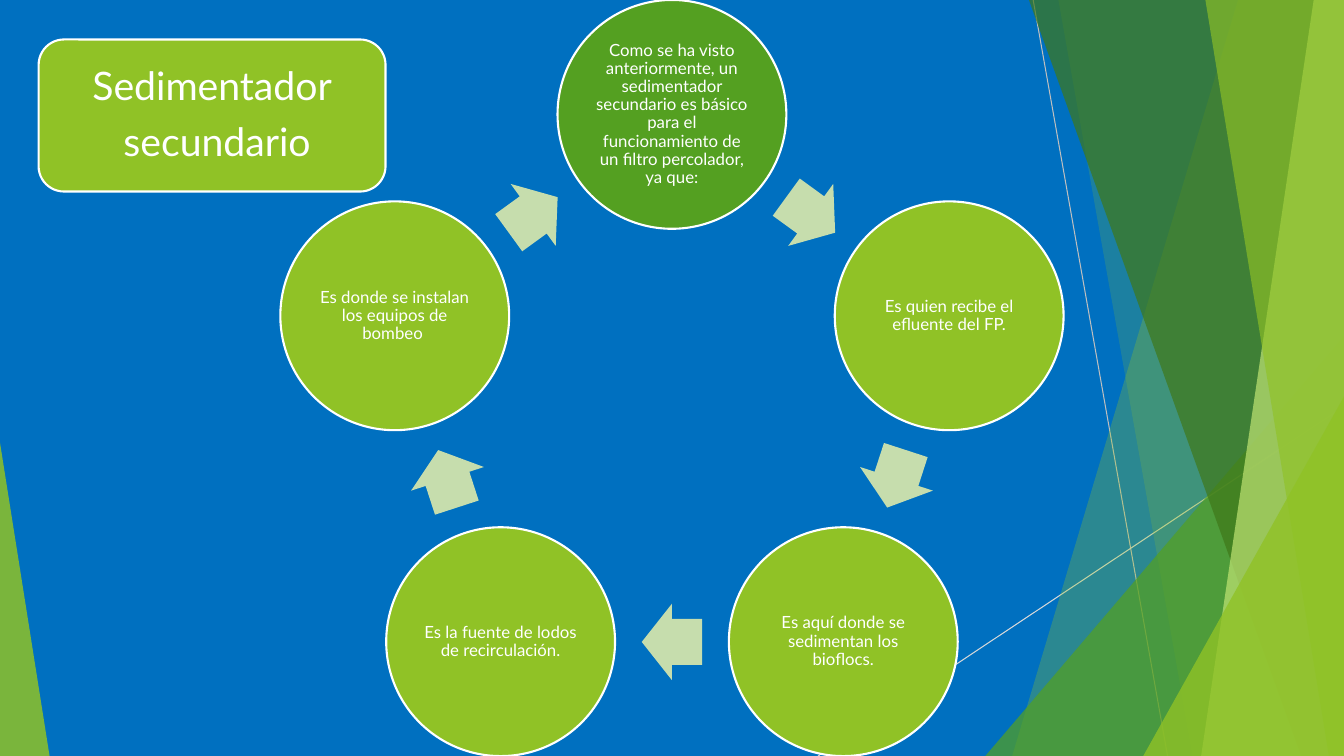
"""Build the cycle slide about the secondary settler."""
import math

import pptx
import pptx.dml.color
import pptx.enum.shapes
import pptx.enum.text
import pptx.oxml.ns
import pptx.util
from lxml import etree

RGBColor = pptx.dml.color.RGBColor
PRESETS = pptx.enum.shapes.MSO_SHAPE

BLUE = RGBColor(0x00, 0x70, 0xC0)
LIME = RGBColor(0x90, 0xC2, 0x26)
GREEN = RGBColor(0x54, 0xA0, 0x21)
DARK_GREEN = RGBColor(0x3F, 0x78, 0x19)
PALE_LIME = RGBColor(0xC0, 0xE4, 0x74)
ARROW_GREEN = RGBColor(0xC6, 0xDD, 0xAD)
GREY = RGBColor(0xBF, 0xBF, 0xBF)
LIGHT_GREY = RGBColor(0xD9, 0xD9, 0xD9)
WHITE = RGBColor(0xFF, 0xFF, 0xFF)

COLUMNS, ROWS = 160, 90
CELL = pptx.util.Inches(1) // 12
FONT = "Lato"

RING_CENTRE = (80, 48.32)
STEP_RADIUS, ARROW_RADIUS = 34.7, 28.1
STEP_SIZE = 27.24
ARROW_WIDTH, ARROW_HEIGHT = 7.2, 9.12

TITLE = ["Sedimentador", " secundario"]
STEPS = [
    "Como se ha visto anteriormente, un sedimentador secundario es básico "
    "para el funcionamiento de un filtro percolador, ya que:",
    "Es quien recibe el efluente del FP.",
    "Es aquí donde se sedimentan los bioflocs.",
    "Es la fuente de lodos de recirculación.",
    "Es donde se instalan los equipos de bombeo ",
]


def cells(count):
    """Turn a number of grid cells into a length."""
    return pptx.util.Emu(round(count * CELL))


def paint(shape, colour, opacity=100, outlined=False):
    """Fill a shape, with a white outline or none."""
    shape.shadow.inherit = False
    shape.fill.solid()
    shape.fill.fore_color.rgb = colour
    if opacity < 100:
        colour_node = shape.element.spPr.find(
            pptx.oxml.ns.qn("a:solidFill"))[0]
        alpha = etree.SubElement(colour_node, pptx.oxml.ns.qn("a:alpha"))
        alpha.set("val", str(opacity * 1000))
    if outlined:
        shape.line.color.rgb = WHITE
        shape.line.width = pptx.util.Pt(1.5)
    else:
        shape.line.fill.background()


def add_preset(slide, preset, left, top, width, height, adjustments=()):
    """Place a preset shape on the grid."""
    shape = slide.shapes.add_shape(
        preset, cells(left), cells(top), cells(width), cells(height))
    for index, value in enumerate(adjustments):
        shape.adjustments[index] = value
    return shape


def add_ray(slide, start, end, colour):
    """Draw a thin line between two grid points."""
    ray = slide.shapes.add_connector(
        pptx.enum.shapes.MSO_CONNECTOR.STRAIGHT,
        *(cells(value) for value in (*start, *end)))
    ray.line.color.rgb = colour
    ray.line.width = pptx.util.Pt(0.75)
    etree.SubElement(ray.element.spPr, pptx.oxml.ns.qn("a:effectLst"))


def add_facet(slide, top_column, bottom_column, colour, opacity):
    """Draw a full-height facet reaching the right edge."""
    outline = slide.shapes.build_freeform(
        cells(top_column), 0, scale=1.0)
    corners = [(COLUMNS, 0), (COLUMNS, ROWS), (bottom_column, ROWS)]
    outline.add_line_segments(
        [(cells(column), cells(row)) for column, row in corners], close=True)
    paint(outline.convert_to_shape(), colour, opacity)


def add_corner(slide, left, top, width, apex, colour, opacity):
    """Draw a triangle standing on the bottom edge."""
    corner = add_preset(slide, PRESETS.ISOSCELES_TRIANGLE,
                        left, top, width, ROWS - top, [apex])
    paint(corner, colour, opacity)


def write(shape, lines, size, inset):
    """Write centred white paragraphs inside a shape."""
    frame = shape.text_frame
    frame.word_wrap = True
    frame.vertical_anchor = pptx.enum.text.MSO_ANCHOR.MIDDLE
    frame.margin_left = frame.margin_right = cells(inset)
    frame.margin_top = frame.margin_bottom = cells(inset)
    for index, line in enumerate(lines):
        paragraph = frame.add_paragraph() if index else frame.paragraphs[0]
        paragraph.alignment = pptx.enum.text.PP_ALIGN.CENTER
        paragraph.line_spacing = 0.9
        paragraph.space_after = pptx.util.Pt(size * 0.35)
        run = paragraph.add_run()
        run.text = line
        run.font.name = FONT
        run.font.size = pptx.util.Pt(size)
        run.font.color.rgb = WHITE


def add_on_ring(slide, preset, angle, radius, width, height, adjustments=()):
    """Centre a preset shape on the ring, clockwise from the top."""
    turn = math.radians(angle)
    column = RING_CENTRE[0] + radius * math.sin(turn)
    row = RING_CENTRE[1] - radius * math.cos(turn)
    return add_preset(slide, preset, column - width / 2, row - height / 2,
                      width, height, adjustments)


def add_backdrop(slide):
    """Draw the rays and translucent facets at the slide edges."""
    add_ray(slide, (123, 0), (139, ROWS), GREY)
    add_ray(slide, (COLUMNS, 48.4), (97.4, ROWS), LIGHT_GREY)
    add_facet(slide, 147.4, 120.5, LIME, 30)
    add_facet(slide, 126, 142, LIME, 20)
    add_corner(slide, 117.3, 40, 42.7, 1, GREEN, 72)
    add_facet(slide, 122.5, 154.9, DARK_GREEN, 70)
    add_facet(slide, 156.4, 143, PALE_LIME, 70)
    add_facet(slide, 143.5, 158.2, LIME, 65)
    add_corner(slide, 136.1, 47.2, 23.9, 1, LIME, 80)
    add_corner(slide, 0, 52.7, 5.9, 0, LIME, 85)


def add_cycle(slide):
    """Draw the ring of steps with an arrow after each one."""
    sector = 360 / len(STEPS)
    for index, text in enumerate(STEPS):
        angle = index * sector
        step = add_on_ring(slide, PRESETS.OVAL, angle, STEP_RADIUS,
                           STEP_SIZE, STEP_SIZE)
        paint(step, LIME if index else GREEN, outlined=True)
        write(step, [text], 12, 0.2)
        arrow_angle = angle + sector / 2
        arrow = add_on_ring(slide, PRESETS.RIGHT_ARROW, arrow_angle,
                            ARROW_RADIUS, ARROW_WIDTH, ARROW_HEIGHT,
                            [0.6, 0.5])
        arrow.rotation = arrow_angle
        paint(arrow, ARROW_GREEN)


def add_title(slide):
    """Draw the rounded title panel."""
    panel = add_preset(slide, PRESETS.ROUNDED_RECTANGLE,
                       4.6, 4.7, 41.3, 18.1)
    paint(panel, LIME, outlined=True)
    write(panel, TITLE, 28, 1.4)


def main():
    """Build and save the slide."""
    deck = pptx.Presentation()
    deck.slide_width = cells(COLUMNS)
    deck.slide_height = cells(ROWS)
    slide = deck.slides.add_slide(deck.slide_layouts[6])
    slide.background.fill.solid()
    slide.background.fill.fore_color.rgb = BLUE
    add_backdrop(slide)
    add_cycle(slide)
    add_title(slide)
    deck.save("out.pptx")


if __name__ == "__main__":
    main()
